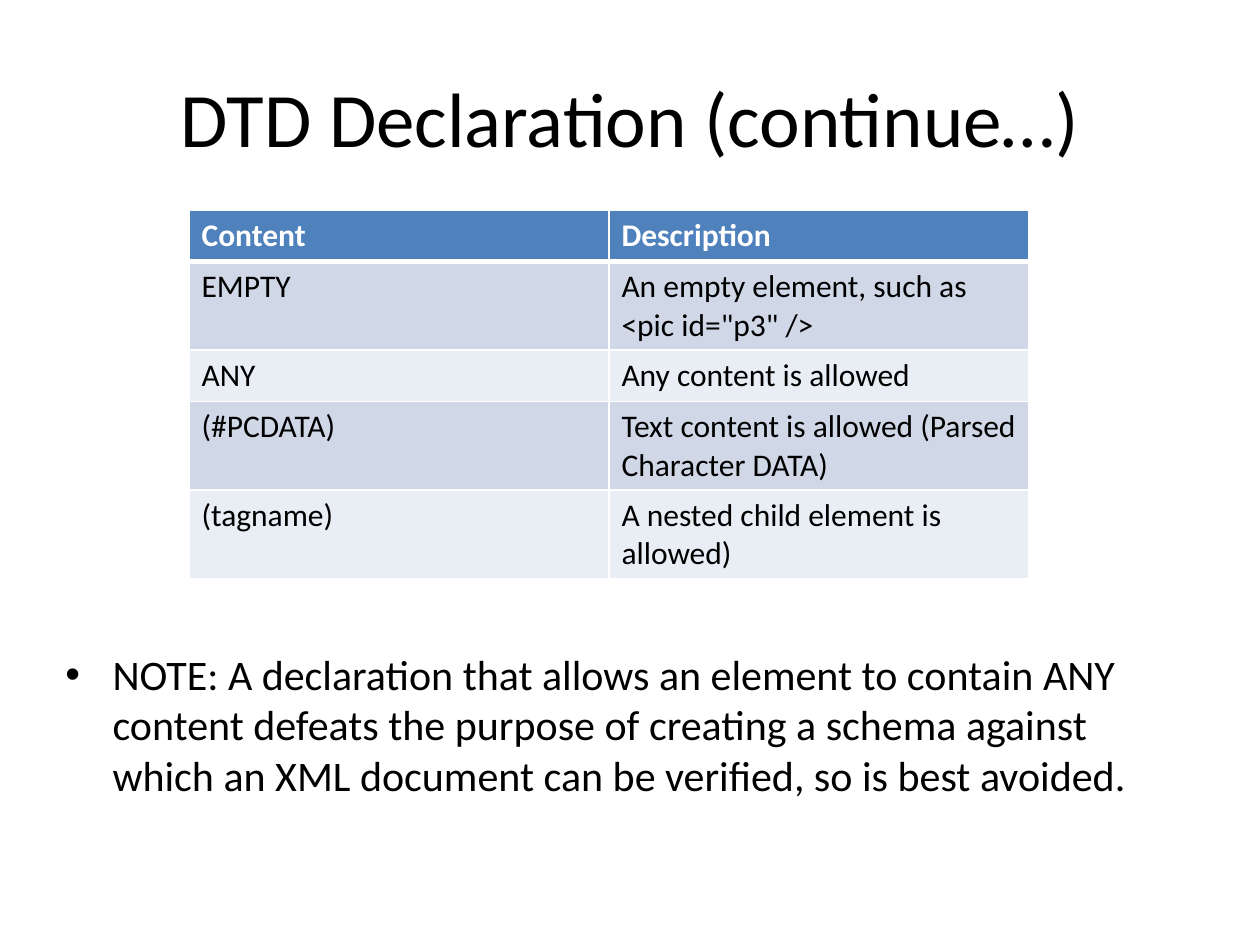
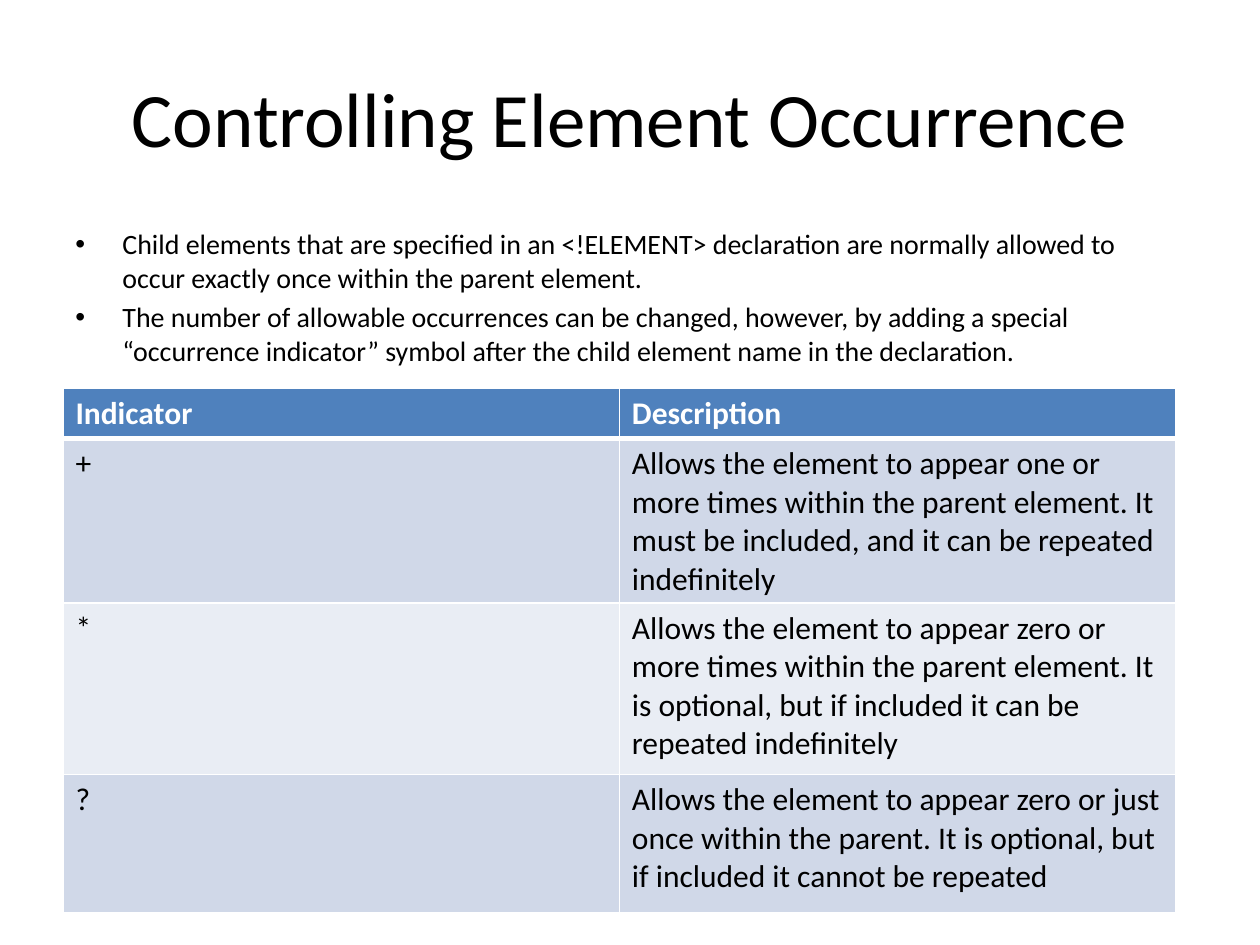
from lxml.etree import SubElement
from pptx import Presentation
from pptx.dml.color import RGBColor
from pptx.enum.text import MSO_ANCHOR, PP_ALIGN
from pptx.oxml.ns import qn
from pptx.util import Cm, Pt

FONT = "Calibri"
BLACK, WHITE = "000000", "FFFFFF"
HEADER, BAND_DARK, BAND_LIGHT = "4F81BD", "D0D8E8", "E9EDF4"
TITLE_BOX = (1.27, 0.76, 22.86, 3.18)
INDENT = 0.95


def rgb(color):
    return RGBColor.from_string(color)


def write(p, text, size=18, color=BLACK, bold=False, align=None):
    r = p.add_run()
    r.text = text
    r.font.name = FONT
    r.font.size = Pt(size)
    r.font.color.rgb = rgb(color)
    r.font.bold = bold
    if align is not None:
        p.alignment = align


def add_titled_slide(prs, title):
    s = prs.slides.add_slide(prs.slide_layouts[5])
    sp = s.shapes.title
    sp.left, sp.top, sp.width, sp.height = map(Cm, TITLE_BOX)
    tf = sp.text_frame
    tf.vertical_anchor = MSO_ANCHOR.MIDDLE
    write(tf.paragraphs[0], title, size=44, align=PP_ALIGN.CENTER)
    return s


def add_bullets(s, box, items, size):
    tf = s.shapes.add_textbox(*map(Cm, box)).text_frame
    tf.word_wrap = True
    for i, item in enumerate(items):
        p = tf.add_paragraph() if i else tf.paragraphs[0]
        p.space_before = Pt(0.2 * size if i else 0)
        write(p, item, size=size)
        # Hanging bullet
        pPr = p._p.get_or_add_pPr()
        pPr.set("marL", str(Cm(INDENT)))
        pPr.set("indent", str(-Cm(INDENT)))
        SubElement(pPr, qn("a:buFont"), typeface="Arial")
        SubElement(pPr, qn("a:buChar"), char="•")


def set_borders(cell, **widths):
    tcPr = cell._tc.get_or_add_tcPr()
    for side in "LRTB":
        ln = SubElement(tcPr, qn(f"a:ln{side}"), w=str(Pt(widths.get(side, 1))))
        fill = SubElement(ln, qn("a:solidFill"))
        SubElement(fill, qn("a:srgbClr"), val=WHITE)


def add_banded_table(s, left, top, width, heights, rows):
    cols = len(rows[0])
    frame = s.shapes.add_table(len(rows), cols, Cm(left), Cm(top),
                               Cm(width), Cm(sum(heights)))
    table = frame.table
    for col in table.columns:
        col.width = Cm(width / cols)
    for i, (height, texts) in enumerate(zip(heights, rows)):
        table.rows[i].height = Cm(height)
        is_header = i == 0
        band = BAND_DARK if i % 2 else BAND_LIGHT
        for j, text in enumerate(texts):
            cell = table.cell(i, j)
            # A thick rule separates the header from the body
            set_borders(cell, B=3 if is_header else 1, T=3 if i == 1 else 1)
            cell.fill.solid()
            cell.fill.fore_color.rgb = rgb(HEADER if is_header else band)
            write(cell.text_frame.paragraphs[0], text, bold=is_header,
                  color=WHITE if is_header else BLACK)


def build_declaration(prs):
    s = add_titled_slide(prs, "DTD Declaration (continue…)")
    add_bullets(s, (1.07, 12.95, 22.86, 4.27), [
        "NOTE: A declaration that allows an element to contain ANY content "
        "defeats the purpose of creating a schema against which an XML "
        "document can be verified, so is best avoided.",
    ], size=24)
    one_line, two_lines = 1.03, 1.79
    add_banded_table(
        s, 3.81, 4.24, 16.93,
        [one_line, two_lines, one_line, two_lines, two_lines],
        [
            ("Content", "Description"),
            ("EMPTY", 'An empty element, such as <pic id="p3" />'),
            ("ANY", "Any content is allowed"),
            ("(#PCDATA)", "Text content is allowed (Parsed Character DATA)"),
            ("(tagname)", "A nested child element is allowed)"),
        ])


def build_occurrence(prs):
    s = add_titled_slide(prs, "Controlling Element Occurrence")
    add_bullets(s, (1.27, 4.45, 22.86, 3.2), [
        "Child elements that are specified in an <!ELEMENT> declaration are "
        "normally allowed to occur exactly once within the parent element.",
        "The number of allowable occurrences can be changed, however, by "
        "adding a special “occurrence indicator” symbol after the child "
        "element name in the declaration.",
    ], size=16)
    add_banded_table(s, 1.27, 7.82, 22.43, [1.02, 3.32, 3.45, 2.79], [
        ("Indicator", "Description"),
        ("+", "Allows the element to appear one or more times within the "
              "parent element. It must be included, and it can be repeated "
              "indefinitely"),
        ("*", "Allows the element to appear zero or more times within the "
              "parent element. It is optional, but if included it can be "
              "repeated indefinitely"),
        ("?", "Allows the element to appear zero or just once within the "
              "parent. It is optional, but if included it cannot be repeated"),
    ])


def main():
    prs = Presentation()
    prs.slide_width, prs.slide_height = Cm(25.4), Cm(19.05)
    build_declaration(prs)
    build_occurrence(prs)
    prs.save("out.pptx")


if __name__ == "__main__":
    main()
